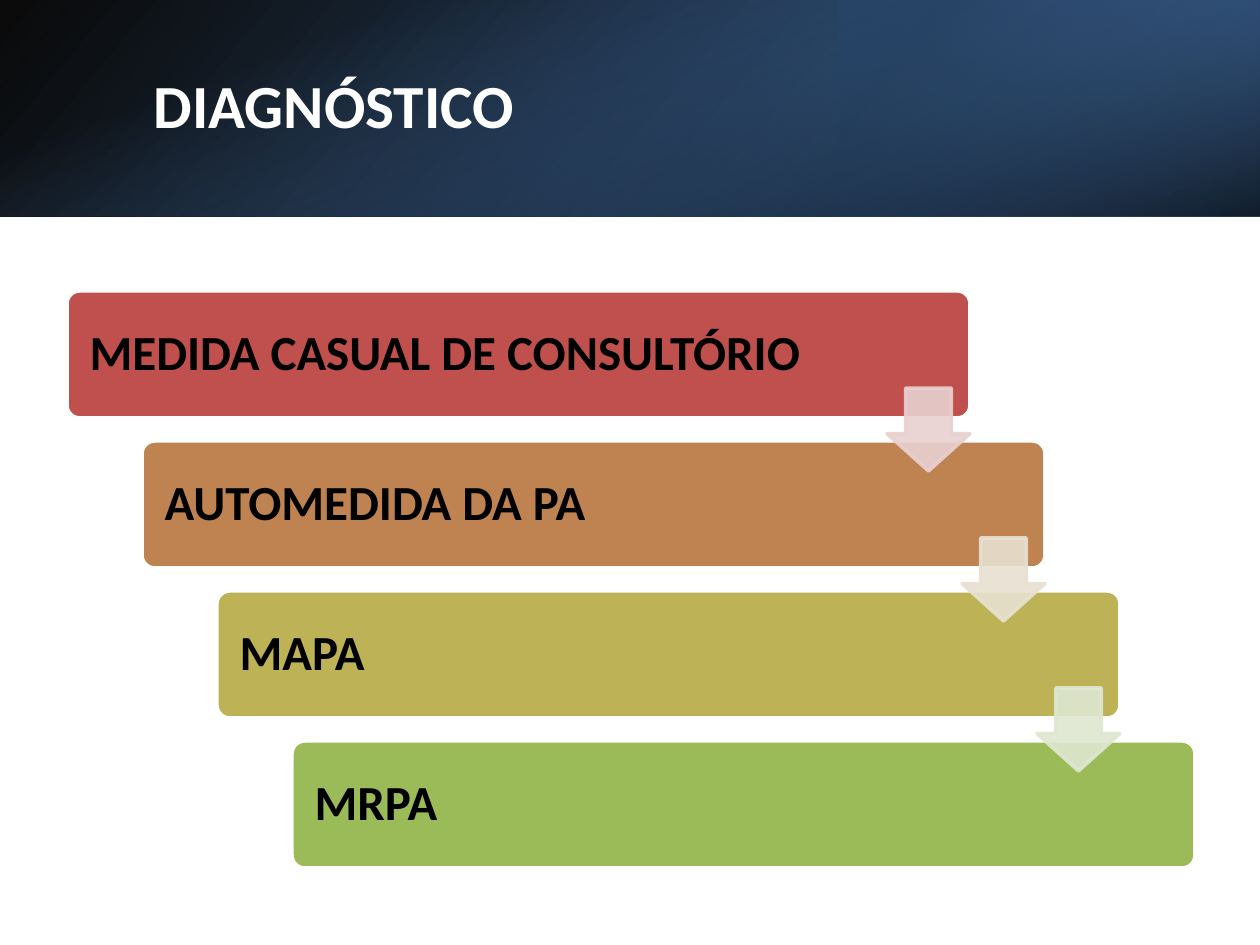
"""Builds the DIAGNÓSTICO slide: a gradient header above a staircase of four steps."""
from pptx import Presentation
from pptx.dml.color import RGBColor
from pptx.enum.shapes import MSO_SHAPE as Shape
from pptx.enum.text import MSO_ANCHOR as Anchor, MSO_AUTO_SIZE as AutoSize, PP_ALIGN as Align
from pptx.oxml import parse_xml
from pptx.oxml.ns import nsdecls, qn
from pptx.util import Emu, Pt
from lxml.etree import SubElement

SCALE = 914400 / 126
FONT = "Calibri"
WHITE = RGBColor(0xFF, 0xFF, 0xFF)
BLACK = RGBColor(0, 0, 0)
NAVY = RGBColor(0x25, 0x40, 0x61)
STEEL = RGBColor(0x37, 0x60, 0x92)
BLUE = RGBColor(0x4F, 0x81, 0xBD)

STEPS = [
    ("MEDIDA CASUAL DE CONSULTÓRIO", RGBColor(0xC0, 0x50, 0x4D)),
    ("AUTOMEDIDA DA PA", RGBColor(0xBE, 0x83, 0x51)),
    ("MAPA", RGBColor(0xBD, 0xB2, 0x55)),
    ("MRPA", RGBColor(0x9B, 0xBB, 0x59)),
]
ARROW_COLORS = [
    RGBColor(0xE8, 0xD0, 0xD0),
    RGBColor(0xE8, 0xE1, 0xD1),
    RGBColor(0xDE, 0xE7, 0xD1),
]
STEP_X, STEP_Y = 75, 150


def px(value):
    return Emu(round(value * SCALE))


def add_plain_shape(page, kind, left, top, width, height):
    shape = page.shapes.add_shape(kind, px(left), px(top), px(width), px(height))
    shape.shadow.inherit = False
    return shape


def add_gradient_band(page, area, angle, stops, rotation=0, flipped=False):
    band = add_plain_shape(page, Shape.RECTANGLE, *area)
    band.rotation = rotation
    band.line.fill.background()
    properties = band._element.spPr
    if flipped:
        properties.xfrm.set("flipH", "1")
    stop_xml = "".join(
        f'<a:gs pos="{position * 1000}"><a:srgbClr val="{color}">'
        f'<a:alpha val="{alpha * 1000}"/></a:srgbClr></a:gs>'
        for position, color, alpha in stops
    )
    gradient = parse_xml(
        f'<a:gradFill {nsdecls("a")} rotWithShape="1"><a:gsLst>{stop_xml}</a:gsLst>'
        f'<a:lin ang="{angle * 60000}" scaled="0"/></a:gradFill>'
    )
    properties.find(qn("a:prstGeom")).addnext(gradient)


def add_header(page):
    add_gradient_band(page, (0, 0, 1260, 217), 140,
                      [(0, BLACK, 96), (100, STEEL, 100)], flipped=True)
    add_gradient_band(page, (840, 0, 420, 217), 320,
                      [(19, NAVY, 68), (100, BLUE, 79)], rotation=180, flipped=True)
    add_gradient_band(page, (522, -522, 217, 1260), 340,
                      [(23, BLUE, 0), (99, BLACK, 74)], rotation=90)


def write_text(frame, text, size, color, space_after):
    frame.word_wrap = True
    frame.auto_size = AutoSize.NONE
    frame.vertical_anchor = Anchor.MIDDLE
    para = frame.paragraphs[0]
    para.alignment = Align.LEFT
    para.line_spacing = 0.9
    para.space_before = Pt(0)
    para.space_after = Pt(space_after)
    span = para.add_run()
    span.text = text
    span.font.name = FONT
    span.font.size = Pt(size)
    span.font.bold = True
    span.font.color.rgb = color


def place_title(page, text):
    title = page.shapes.title
    title.left, title.top, title.width, title.height = map(px, (141, 48, 1038, 121))
    write_text(title.text_frame, text, 35, WHITE, 6)
    page.shapes._spTree.append(title._element)


def add_step(page, index, text, color):
    bar = add_plain_shape(page, Shape.ROUNDED_RECTANGLE,
                          67 + index * STEP_X, 291 + index * STEP_Y, 903, 127)
    bar.adjustments[0] = 0.1
    bar.fill.solid()
    bar.fill.fore_color.rgb = color
    bar.line.color.rgb = WHITE
    bar.line.width = Pt(2)
    frame = bar.text_frame
    frame.margin_left = frame.margin_right = px(19)
    write_text(frame, text, 28, BLACK, 10)


def add_arrow(page, index, color):
    arrow = add_plain_shape(page, Shape.DOWN_ARROW,
                            887 + index * STEP_X, 388 + index * STEP_Y, 83, 83)
    arrow.adjustments[0] = 0.55
    arrow.adjustments[1] = 0.45
    arrow.fill.solid()
    arrow.fill.fore_color.rgb = color
    arrow.line.color.rgb = color
    arrow.line.width = Pt(2)
    for tint in arrow._element.spPr.iter(qn("a:srgbClr")):
        SubElement(tint, qn("a:alpha")).set("val", "90000")


def main():
    deck = Presentation()
    deck.slide_width, deck.slide_height = px(1260), px(945)
    page = deck.slides.add_slide(deck.slide_layouts[5])
    add_header(page)
    place_title(page, "DIAGNÓSTICO")
    for index, (text, color) in enumerate(STEPS):
        add_step(page, index, text, color)
    for index, color in enumerate(ARROW_COLORS):
        add_arrow(page, index, color)
    deck.save("out.pptx")


if __name__ == "__main__":
    main()
